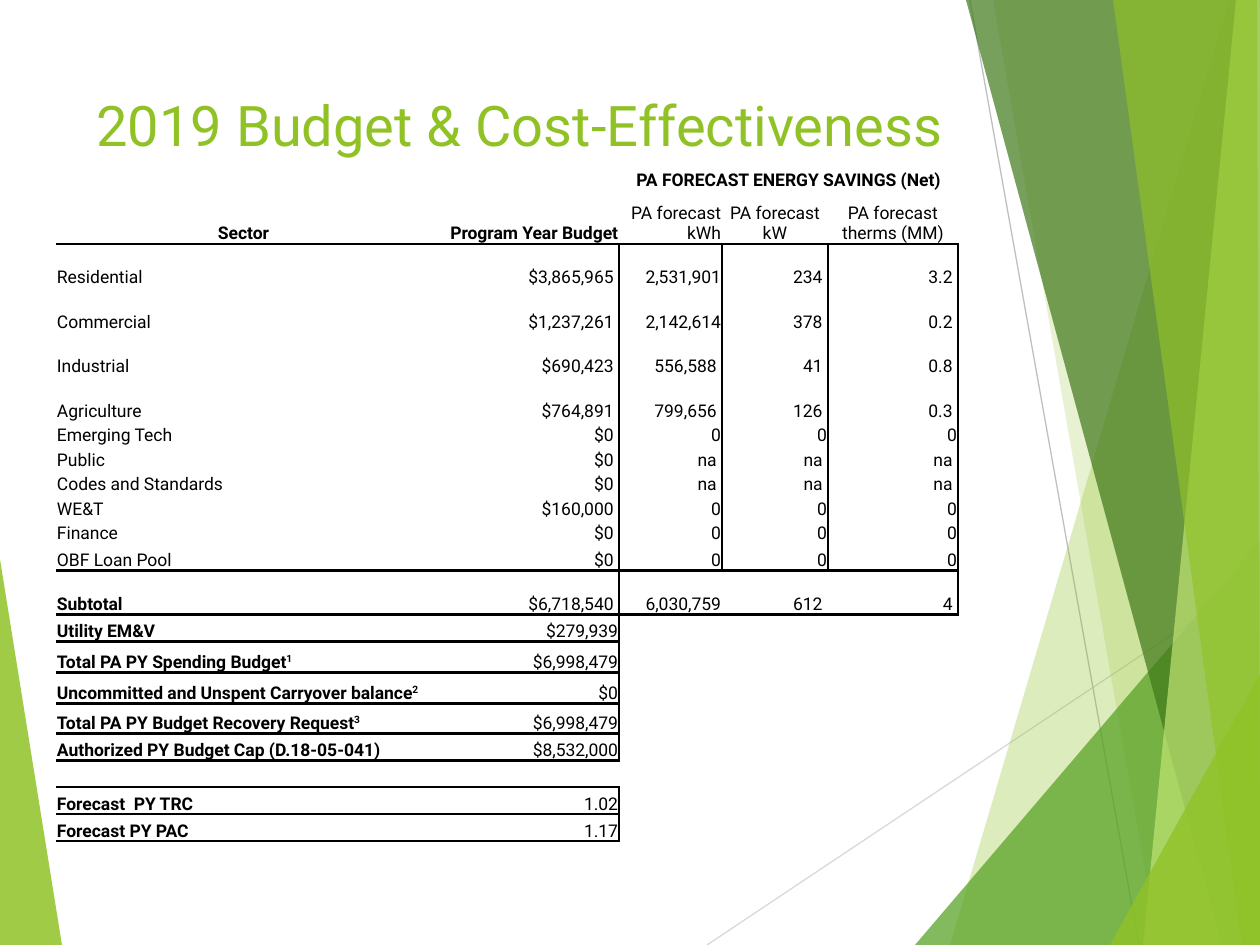
from lxml.etree import SubElement
from pptx import Presentation
from pptx.dml.color import RGBColor
from pptx.enum.text import MSO_ANCHOR, PP_ALIGN
from pptx.oxml import parse_xml
from pptx.oxml.ns import nsdecls, qn
from pptx.util import Pt

SCALE = 914400 / 126
FONT = "Roboto"
GREEN = "90C226"
BLACK = "000000"
LEFT, CENTER, RIGHT = PP_ALIGN.LEFT, PP_ALIGN.CENTER, PP_ALIGN.RIGHT

BEAMS = [("D9D9D9", (707, 945), (1260, 576)), ("BFBFBF", (970, 0), (1139, 945))]
LEFT_FACET = (GREEN, 85, [(0, 559), (62, 945), (0, 945)])
RIGHT_FACETS = [
    (GREEN, 30, [(1229, 0), (950, 945), (1260, 945), (1260, 0)]),
    (GREEN, 20, [(993, 0), (1158, 945), (1260, 945), (1260, 0)]),
    ("54A021", 72, [(915, 945), (1260, 541), (1260, 945)]),
    ("3F7819", 70, [(966, 0), (1222, 945), (1260, 945), (1260, 0)]),
    ("C0E474", 70, [(1236, 0), (1143, 945), (1260, 945), (1260, 0)]),
    (GREEN, 65, [(1113, 0), (1242, 945), (1260, 945), (1257, 0)]),
    (GREEN, 80, [(1110, 945), (1260, 674), (1260, 945)]),
]

COLUMNS = [375, 188, 103, 106, 130]
ROWS = [25, 50, 44, 45, 44, 45, 24, 25, 24, 25, 24, 27, 44, 27, 31, 31, 30, 27, 27, 27, 27]
HEADINGS = ["Sector", "Program Year Budget", "PA forecast kWh", "PA forecast kW",
            "PA forecast therms (MM)"]
SECTORS = [
    ["Residential", "$3,865,965 ", "2,531,901", "234 ", "3.2 "],
    ["Commercial", "$1,237,261 ", "2,142,614", "378 ", "0.2 "],
    ["Industrial", "$690,423 ", "556,588 ", "41 ", "0.8 "],
    ["Agriculture", "$764,891 ", "799,656 ", "126 ", "0.3 "],
    ["Emerging Tech", "$0 ", "0", "0", "0"],
    ["Public", "$0 ", "na ", "na ", "na "],
    ["Codes and Standards", "$0 ", "na ", "na ", "na "],
    ["WE&T", "$160,000 ", "0", "0", "0"],
    ["Finance", "$0 ", "0", "0", "0"],
    ["OBF Loan Pool", "$0 ", "0", "0", "0"],
]
TOTALS = [
    ["Subtotal", "$6,718,540 ", "6,030,759", "612 ", "4 "],
    ["Utility EM&V", "$279,939"],
    ["Total PA PY Spending Budget^1", "$6,998,479"],
    ["Uncommitted and Unspent Carryover balance^2", "$0"],
    ["Total PA PY Budget Recovery Request^3", "$6,998,479"],
    ["Authorized PY Budget Cap (D.18-05-041)", "$8,532,000"],
    [],
    ["Forecast  PY TRC", "1.02"],
    ["Forecast PY PAC", "1.17"],
]
BUDGET = [["", "", "PA FORECAST ENERGY SAVINGS (Net)"], HEADINGS, *SECTORS, *TOTALS]
HEADING_ROW = 1
SUBTOTAL_ROW = HEADING_ROW + len(SECTORS) + 1
GAP_ROW = BUDGET.index([])


def px(length):
    """Turn px into EMU."""
    return round(length * SCALE)


def color(hex_code):
    """Turn a hex string into a colour."""
    return RGBColor.from_string(hex_code)


def set_font(paragraph, size, hex_code, bold=False):
    """Set the font of a whole paragraph."""
    font = paragraph.font
    font.name, font.size, font.bold = FONT, Pt(size), bold
    font.color.rgb = color(hex_code)


def add_facet(slide, box, hex_code, opacity, points):
    """Draw one translucent polygon."""
    corners = [(box[0] + x, box[1] + y) for x, y in points]
    builder = slide.shapes.build_freeform(*corners[0], scale=SCALE)
    builder.add_line_segments(corners[1:], close=True)
    facet = builder.convert_to_shape()
    facet.shadow.inherit = False
    facet.fill.solid()
    facet.fill.fore_color.rgb = color(hex_code)
    facet.line.fill.background()
    tint = facet.fill._xPr.find(f".//{qn('a:srgbClr')}")
    SubElement(tint, qn("a:alpha"), val=str(opacity * 1000))


def add_backdrop(slide, box):
    """Draw the facets and thin beams around the slide."""
    left, top = box[:2]
    add_facet(slide, box, *LEFT_FACET)
    for hex_code, (x1, y1), (x2, y2) in BEAMS:
        beam = slide.shapes.add_connector(
            1, px(left + x1), px(top + y1), px(left + x2), px(top + y2))
        beam.line.color.rgb = color(hex_code)
        beam.line.width = Pt(0.75)
        SubElement(beam._element.spPr, qn("a:effectLst"))
    for facet in RIGHT_FACETS:
        add_facet(slide, box, *facet)


def add_title(slide, box):
    """Write the slide title."""
    frame = slide.shapes.add_textbox(*map(px, box)).text_frame
    frame.word_wrap = True
    frame.vertical_anchor = MSO_ANCHOR.TOP
    title = frame.paragraphs[0]
    title.text = "2019 Budget & Cost-Effectiveness"
    set_font(title, 32, GREEN)


def ruled_below(row, column):
    """Tell whether a cell has a rule under it."""
    if column < 2:
        return row == HEADING_ROW or row >= SUBTOTAL_ROW - 1
    return row in (HEADING_ROW, SUBTOTAL_ROW - 1, SUBTOTAL_ROW)


def ruled_right(row, column):
    """Tell whether a cell has a rule on its right."""
    last = {1: len(ROWS) - 1, 2: SUBTOTAL_ROW - 1, 3: SUBTOTAL_ROW - 1, 4: SUBTOTAL_ROW}
    return HEADING_ROW < row <= last.get(column, 0) and row != GAP_ROW


def set_borders(cell, row, column):
    """Rule the four sides of a cell."""
    sides = {"lnL": ruled_right(row, column - 1), "lnR": ruled_right(row, column),
             "lnT": ruled_below(row - 1, column), "lnB": ruled_below(row, column)}
    for place, (side, ruled) in enumerate(sides.items()):
        ink = f'<a:solidFill><a:srgbClr val="{BLACK}"/></a:solidFill>' if ruled else "<a:noFill/>"
        border = f'<a:{side} {nsdecls("a")} w="{Pt(1.5)}">{ink}</a:{side}>'
        cell._tc.get_or_add_tcPr().insert(place, parse_xml(border))


def alignment(row, column):
    """Choose the alignment of a cell."""
    if row <= HEADING_ROW:
        return RIGHT if row and column in (1, 2) else CENTER
    return RIGHT if column else LEFT


def fill_cell(cell, row, column, text):
    """Write and style one cell."""
    cell.fill.background()
    cell.margin_left = cell.margin_right = cell.margin_top = px(1)
    cell.margin_bottom = 0
    cell.vertical_anchor = MSO_ANCHOR.BOTTOM if row else MSO_ANCHOR.TOP
    paragraph = cell.text_frame.paragraphs[0]
    paragraph.alignment = alignment(row, column)
    bold_columns = {0: (2,), HEADING_ROW: (0, 1)}.get(row, (0,) if row >= SUBTOTAL_ROW else ())
    set_font(paragraph, 10, BLACK, column in bold_columns)
    label, _, note = text.partition("^")
    if label:
        paragraph.add_run().text = label
    else:
        SubElement(paragraph._p, qn("a:endParaRPr"), sz="1000")
    if note:
        mark = paragraph.add_run()
        mark.text = note
        mark.font._element.set("baseline", "30000")
    set_borders(cell, row, column)


def add_budget(slide, box):
    """Build the budget and savings table."""
    table = slide.shapes.add_table(len(ROWS), len(COLUMNS), *map(px, box)).table
    table.first_row = table.horz_banding = False
    for column, width in enumerate(COLUMNS):
        table.columns[column].width = px(width)
    for row, height in enumerate(ROWS):
        table.rows[row].height = px(height)
        texts = BUDGET[row] + [""] * (len(COLUMNS) - len(BUDGET[row]))
        for column, text in enumerate(texts):
            fill_cell(table.cell(row, column), row, column, text)
    table.cell(0, 2).merge(table.cell(0, 4))


def main():
    """Build and save the slide."""
    deck = Presentation()
    deck.slide_width, deck.slide_height = px(1260), px(945)
    slide = deck.slides.add_slide(deck.slide_layouts[6])
    add_backdrop(slide, (0, 0, 1260, 945))
    add_title(slide, (84, 84, 874, 181))
    add_budget(slide, (56, 169, sum(COLUMNS), sum(ROWS)))
    deck.save("out.pptx")


if __name__ == "__main__":
    main()
